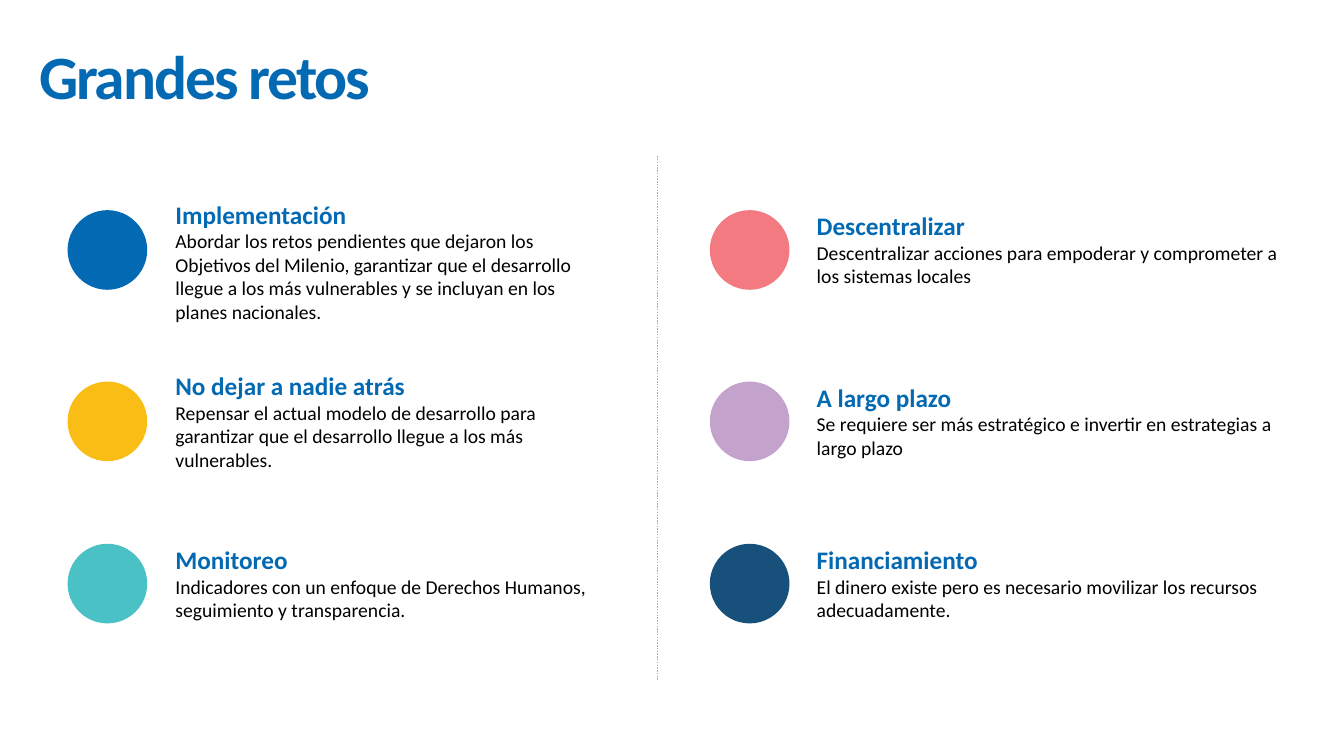
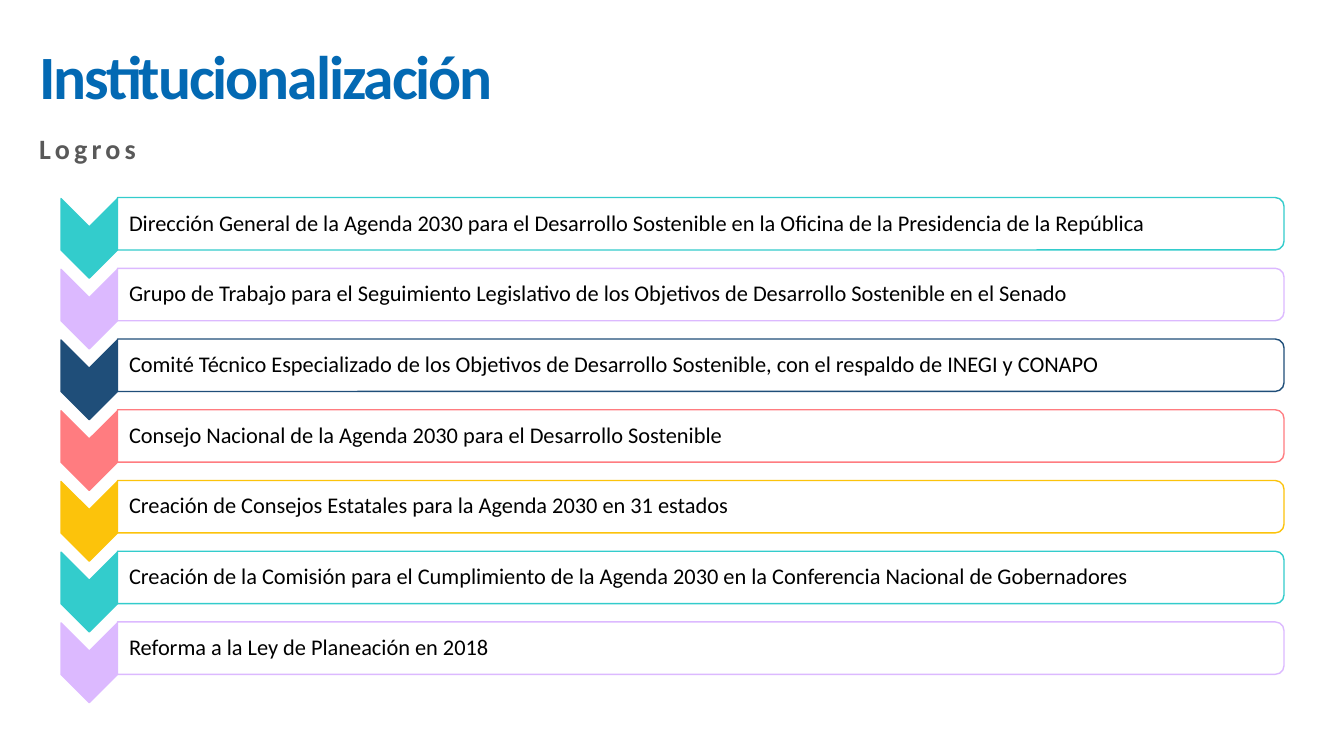
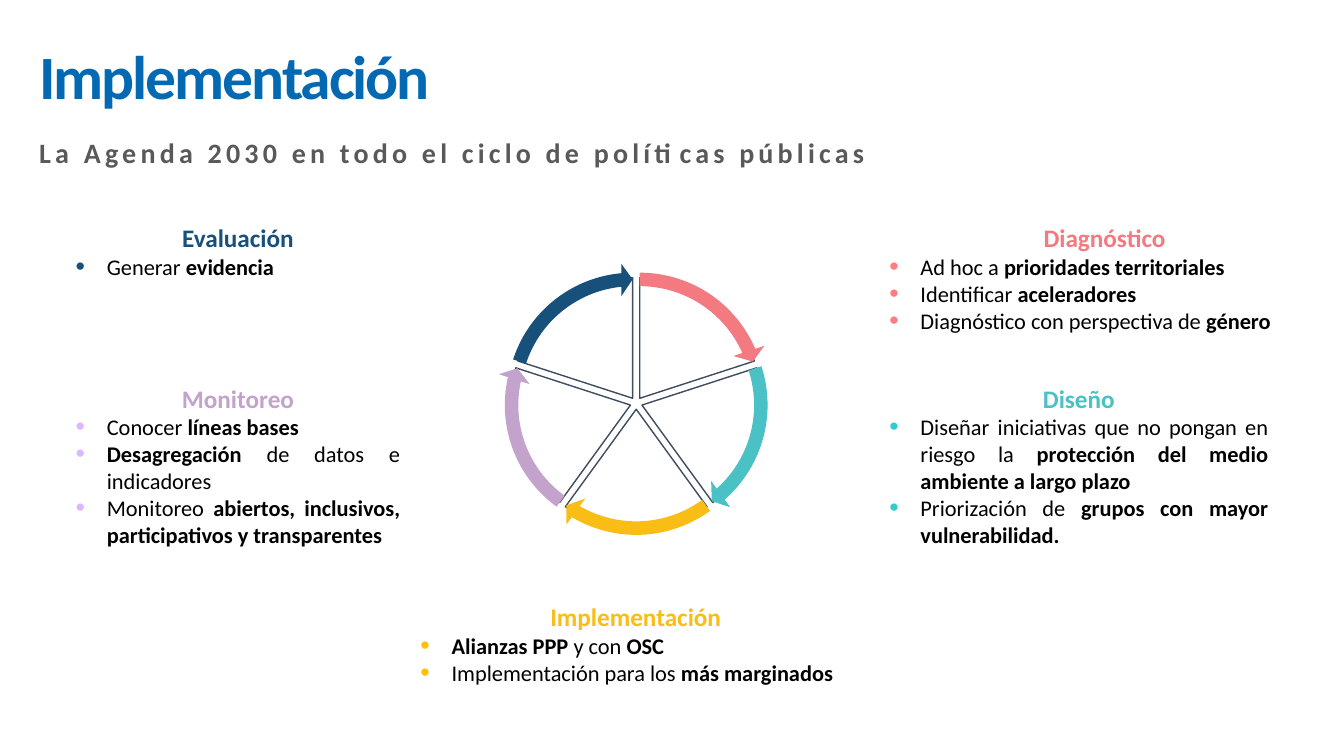
import math

from pptx import Presentation
from pptx import util as u
from pptx.dml.color import RGBColor
from pptx.enum import dml, shapes, text
from pptx.oxml.ns import qn
from lxml import etree

FONT = "Calibri"
COLORS = {
    "blue": "0369B3", "yellow": "F9BD16", "teal": "4AC1C4", "coral": "F27A80",
    "navy": "17507B", "lilac": "C3A2CC", "black": "000000", "white": "FFFFFF",
    "gray": "595959", "divider": "AFABAB", "spoke": "3E4C60",
    "aqua": "33CCCC", "lavender": "DCB9FF", "marine": "1F4E79",
    "salmon": "FF7C80", "gold": "FCC30B", "amber": "FFC000",
}
THIN = (0.05, 0.05, 0.05, 0.05)
NORMAL = (0.1, 0.05, 0.1, 0.05)
ROW_TEXT = (0.12, 0.01, 0.01, 0.01)

CHALLENGE_CENTERS = (2.48, 4.18, 5.79)
CHALLENGE_COLUMNS = [
    (0.67, 1.69, 4.37, [
        ("blue", 1.11, "Implementación",
         "Abordar los retos pendientes que dejaron los Objetivos del Milenio, garantizar que el "
         "desarrollo llegue a los más vulnerables y se incluyan en los planes nacionales."),
        ("yellow", 1.11, "No dejar a nadie atrás",
         "Repensar el actual modelo de desarrollo para garantizar que el desarrollo llegue a los "
         "más vulnerables."),
        ("teal", 0.88, "Monitoreo",
         "Indicadores con un enfoque de Derechos Humanos, seguimiento y transparencia."),
    ]),
    (7.04, 8.05, 4.68, [
        ("coral", 0.88, "Descentralizar",
         "Descentralizar acciones para empoderar y comprometer a los sistemas locales"),
        ("lilac", 0.88, "A largo plazo",
         "Se requiere ser más estratégico e invertir en estrategias a largo plazo"),
        ("navy", 0.88, "Financiamiento",
         "El dinero existe pero es necesario movilizar los recursos adecuadamente."),
    ]),
]

ACHIEVEMENT_COLORS = ("aqua", "lavender", "marine", "salmon", "gold")
ACHIEVEMENTS = [
    "Dirección General de la Agenda 2030 para el Desarrollo Sostenible en la Oficina de la "
    "Presidencia de la República",
    "Grupo de Trabajo para el Seguimiento Legislativo de los Objetivos de Desarrollo Sostenible "
    "en el Senado",
    "Comité Técnico Especializado de los Objetivos de Desarrollo Sostenible, con el respaldo de "
    "INEGI y CONAPO",
    "Consejo Nacional de la Agenda 2030 para el Desarrollo Sostenible",
    "Creación de Consejos Estatales para la Agenda 2030 en 31 estados",
    "Creación de la Comisión para el Cumplimiento de la Agenda 2030 en la Conferencia Nacional "
    "de Gobernadores",
    "Reforma a la Ley de Planeación en 2018",
]

STAGES = [
    ("Diagnóstico", "coral", "salmon", (8.77, 2.16, 4.37, 1.21), [
        "Ad hoc a *prioridades territoriales*",
        "Identificar *aceleradores*",
        "Diagnóstico con perspectiva de *género*"]),
    ("Diseño", "teal", "aqua", (8.77, 3.75, 3.86, 1.75), [
        "Diseñar iniciativas que no pongan en riesgo la "
        "*protección del medio ambiente a largo plazo*",
        "Priorización de *grupos con mayor vulnerabilidad.*"]),
    ("Implementación", "yellow", "amber", (4.12, 5.92, 4.37, 0.94), [
        "*Alianzas PPP* y con *OSC*",
        "Implementación para los *más marginados*"]),
    ("Monitoreo", "lilac", "lavender", (0.7, 3.75, 3.32, 1.75), [
        "Conocer *líneas bases*",
        "*Desagregación* de datos e indicadores",
        "Monitoreo *abiertos, inclusivos, participativos y transparentes*"]),
    ("Evaluación", "navy", "navy", (0.7, 2.16, 3.32, 0.67), [
        "Generar *evidencia*"]),
]


def rgb(name):
    return RGBColor.from_string(COLORS[name])


def inches(values):
    return [u.Inches(value) for value in values]


def add_bullet(paragraph, color):
    props = paragraph._p.get_or_add_pPr()
    props.set("marL", str(u.Inches(0.31)))
    props.set("indent", str(-u.Inches(0.31)))
    tint = etree.SubElement(etree.SubElement(props, qn("a:buClr")), qn("a:srgbClr"))
    tint.set("val", COLORS[color])
    etree.SubElement(props, qn("a:buSzPct")).set("val", "120000")
    etree.SubElement(props, qn("a:buFont")).set("typeface", "Arial")
    etree.SubElement(props, qn("a:buChar")).set("char", "•")


def write(frame, words, size=16, color="black", bold=False, align="LEFT",
          tracking=0, leading=None, bullet=None):
    paragraph = frame.add_paragraph() if frame.text else frame.paragraphs[0]
    if bullet:
        add_bullet(paragraph, bullet)
    paragraph.alignment = getattr(text.PP_ALIGN, align)
    if leading:
        paragraph.line_spacing = leading
    for index, part in enumerate(words.split("*")):
        if part:
            run = paragraph.add_run()
            run.text = part
            run.font.name = FONT
            run.font.size = u.Pt(size)
            run.font.bold = bold or index % 2 == 1
            run.font.color.rgb = rgb(color)
            if tracking:
                run.font._element.set("spc", str(int(tracking * 100)))


def set_frame(frame, insets, anchor="TOP"):
    frame.word_wrap = True
    frame.vertical_anchor = getattr(text.MSO_ANCHOR, anchor)
    (frame.margin_left, frame.margin_top,
     frame.margin_right, frame.margin_bottom) = inches(insets)
    return frame


def add_box(slide, at, insets=THIN, anchor="TOP", grow=False):
    frame = set_frame(slide.shapes.add_textbox(*inches(at)).text_frame, insets, anchor)
    if grow:
        frame.auto_size = text.MSO_AUTO_SIZE.SHAPE_TO_FIT_TEXT
    return frame


def add_figure(slide, preset, center, size, fill, line=None, rotation=0, adjust=()):
    (x, y), (width, height) = center, size
    figure = slide.shapes.add_shape(
        preset, *inches((x - width / 2, y - height / 2, width, height)))
    figure.shadow.inherit = False
    figure.rotation = rotation
    figure.fill.solid()
    figure.fill.fore_color.rgb = rgb(fill)
    if line:
        figure.line.color.rgb = rgb(line)
        figure.line.width = u.Pt(1)
    else:
        figure.line.fill.background()
    for index, value in enumerate(adjust):
        figure.adjustments[index] = value


def add_slide(deck, heading, subtitle=None, subtitle_top=1.32):
    slide = deck.slides.add_slide(deck.slide_layouts[5])
    title = slide.shapes.title
    title.left, title.top, title.width, title.height = inches((0.29, 0.27, 12.04, 1.03))
    write(set_frame(title.text_frame, NORMAL, "MIDDLE"), heading, size=44, color="blue",
          bold=True, tracking=-1.5, leading=0.9)
    if subtitle:
        write(add_box(slide, (0.29, subtitle_top, 12.12, 0.39), NORMAL), subtitle, size=20,
              color="gray", bold=True, tracking=3, leading=0.8)
    return slide


def build_challenges(deck):
    slide = add_slide(deck, "Grandes retos")
    for dot_left, text_left, width, challenges in CHALLENGE_COLUMNS:
        for center, (color, height, name, detail) in zip(CHALLENGE_CENTERS, challenges):
            add_figure(slide, shapes.MSO_SHAPE.OVAL, (dot_left + 0.395, center),
                       (0.79, 0.79), color)
            frame = add_box(slide, (text_left, center - height / 2, width, height), grow=True)
            write(frame, name, size=18, color="blue", bold=True)
            write(frame, detail, size=14)
    divider = slide.shapes.add_connector(
        shapes.MSO_CONNECTOR.STRAIGHT, *inches((6.52, 1.55, 6.52, 6.75)))
    divider.line.color.rgb = rgb("divider")
    divider.line.width = u.Pt(1)
    divider.line.dash_style = dml.MSO_LINE.ROUND_DOT
    etree.SubElement(divider._element.spPr, qn("a:effectLst"))


def build_achievements(deck):
    slide = add_slide(deck, "Institucionalización", "Logros")
    for row, achievement in enumerate(ACHIEVEMENTS):
        color = ACHIEVEMENT_COLORS[row % len(ACHIEVEMENT_COLORS)]
        middle = 2.22 + row * 0.7017
        add_figure(slide, shapes.MSO_SHAPE.CHEVRON, (0.885, middle + 0.145), (0.79, 0.56),
                   color, color, rotation=90)
        add_figure(slide, shapes.MSO_SHAPE.ROUND_2_SAME_RECTANGLE, (6.95, middle),
                   (0.52, 11.57), "white", color, rotation=90)
        frame = add_box(slide, (1.16, middle - 0.235, 11.54, 0.47), ROW_TEXT, "MIDDLE")
        write(frame, achievement, leading=0.9)


def build_cycle(deck):
    slide = add_slide(deck, "Implementación",
                      "La Agenda 2030 en todo el ciclo de políticas públicas", 1.36)
    sweep = 360 / len(STAGES)
    unit = 0.6
    sectors = []
    for index, stage in enumerate(STAGES):
        start = 270 + index * sweep
        middle = math.radians(start + sweep / 2)
        center = (6.31 + 0.06 * math.cos(middle), 4 + 0.06 * math.sin(middle))
        sectors.append((stage[1], center, start % 360, (start + sweep) % 360))
    for _, center, start, end in sectors:
        add_figure(slide, shapes.MSO_SHAPE.PIE, center, (2.39, 2.39), "white", "spoke",
                   adjust=(start * unit, end * unit))
    for color, center, start, end in sectors:
        add_figure(slide, shapes.MSO_SHAPE.CIRCULAR_ARROW, center, (2.68, 2.68), color,
                   adjust=(0.05, 3.28, (end - 5.46) * unit, start * unit, 0.06))
    for name, color, bullet, at, points in STAGES:
        frame = add_box(slide, at, grow=True)
        write(frame, name, size=18, color=color, bold=True, align="CENTER")
        for point in points:
            write(frame, point, align="JUSTIFY", bullet=bullet)


def main():
    deck = Presentation()
    deck.slide_width, deck.slide_height = inches((13.33, 7.5))
    build_challenges(deck)
    build_achievements(deck)
    build_cycle(deck)
    deck.save("out.pptx")


if __name__ == "__main__":
    main()
